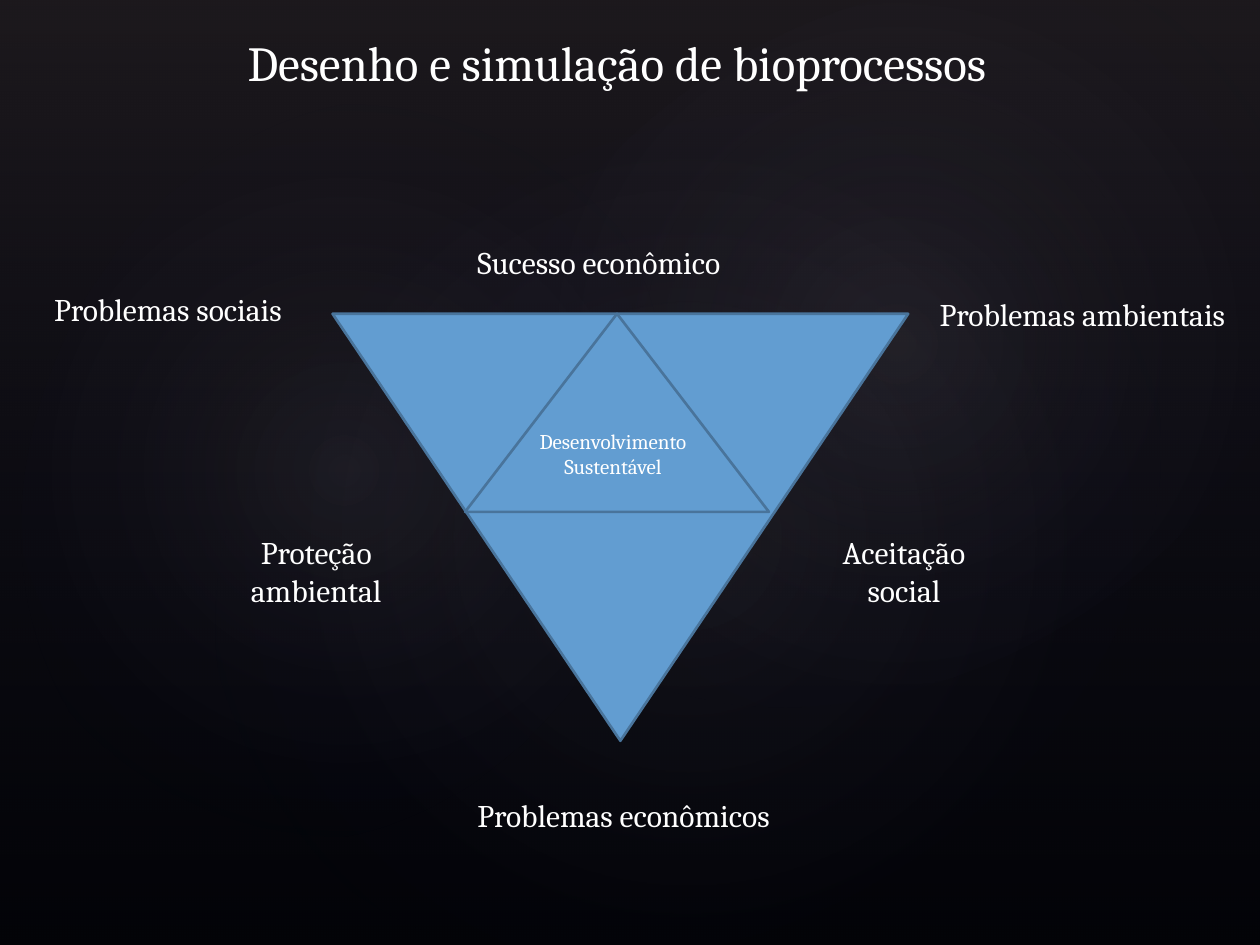
from lxml import etree
from pptx import Presentation
from pptx.dml.color import RGBColor
from pptx.enum.shapes import MSO_SHAPE as Shape
from pptx.enum.text import MSO_AUTO_SIZE as AutoSize, PP_ALIGN as Align
from pptx.oxml.ns import qn
from pptx.util import Pt

W, H = 720, 540
FONT = "Cambria"
COLORS = {"back": "000000", "text": "FFFFFF", "blue": "629DD1", "edge": "49749B",
          "plum": "504652", "navy": "242852", "mist": "C4BCC6"}

# Boxes are (left, top, width, height); stops are (position %, colour, opacity %)
VEIL = [(0, "plum", 36), (100, "navy", 10)]
GLOWS = [
    ((108, 82.1, 570.2, 449.3), 328.7, 7),
    ((-21.6, 92.2, 436.3, 352.8), 294.3, 8),
    ((257.8, 9.4, 510.5, 374.4), 328.7, 8),
]
TRIANGLES = [
    ((190, 179.3, 329, 244), 180),
    ((265.8, 179.3, 173.6, 113.2), 0),
]
LABELS = [
    (["Desenvolvimento", "Sustentável"], (294.5, 241.2, 111.6, 36), 12, Align.CENTER),
    (["Sucesso econômico"], (265.7, 135.4, 168.5, 28.8), 18, Align.LEFT),
    (["Aceitação", "social"], (468, 301, 97.2, 51), 18, Align.CENTER),
    (["Proteção", "ambiental"], (133.2, 301, 95, 51), 18, Align.CENTER),
    (["Problemas sociais"], (23.8, 162, 157, 28.8), 18, Align.LEFT),
    (["Problemas econômicos"], (265.7, 451.4, 198.7, 28.8), 18, Align.LEFT),
    (["Problemas ambientais"], (529.9, 164.9, 192.2, 28.8), 18, Align.LEFT),
    (["Desenho e simulação de bioprocessos"], (110.9, 15.1, 483.1, 41), 28, Align.CENTER),
]


def rgb(name):
    return RGBColor.from_string(COLORS[name])


def add_shape(s, kind, box, rotation=0):
    sp = s.shapes.add_shape(kind, *map(Pt, box))
    sp.rotation = rotation
    sp.shadow.inherit = False
    sp.line.fill.background()
    return sp


def fill_gradient(sp, stops, radial=False):
    """Fill with translucent stops, top to bottom or from the centre outwards."""
    sp.fill.background()
    no_fill = sp._element.spPr.find(qn("a:noFill"))
    grad = etree.Element(qn("a:gradFill"), rotWithShape="1")
    gs_list = etree.SubElement(grad, qn("a:gsLst"))
    for pos, color, opacity in stops:
        gs = etree.SubElement(gs_list, qn("a:gs"), pos=str(pos * 1000))
        clr = etree.SubElement(gs, qn("a:srgbClr"), val=COLORS[color])
        etree.SubElement(clr, qn("a:alpha"), val=str(opacity * 1000))
    if radial:
        path = etree.SubElement(grad, qn("a:path"), path="circle")
        etree.SubElement(path, qn("a:fillToRect"), {side: "50000" for side in "ltrb"})
    else:
        etree.SubElement(grad, qn("a:lin"), ang="5400000", scaled="0")
    no_fill.getparent().replace(no_fill, grad)


def add_text(s, lines, box, *, size, align, color="text"):
    tf = s.shapes.add_textbox(*map(Pt, box)).text_frame
    tf.word_wrap = False
    tf.auto_size = AutoSize.SHAPE_TO_FIT_TEXT
    for i, line in enumerate(lines):
        p = tf.add_paragraph() if i else tf.paragraphs[0]
        p.alignment = align
        r = p.add_run()
        r.text = line
        r.font.name, r.font.size = FONT, Pt(size)
        r.font.color.rgb = rgb(color)


def main():
    prs = Presentation()
    prs.slide_width, prs.slide_height = Pt(W), Pt(H)
    s = prs.slides.add_slide(prs.slide_layouts[6])
    s.background.fill.solid()
    s.background.fill.fore_color.rgb = rgb("back")

    fill_gradient(add_shape(s, Shape.RECTANGLE, (0, 0, W, H)), VEIL)
    for box, rotation, opacity in GLOWS:
        glow = add_shape(s, Shape.OVAL, box, rotation)
        fill_gradient(glow, [(0, "mist", opacity), (58, "navy", 0)], radial=True)

    for box, rotation in TRIANGLES:
        sp = add_shape(s, Shape.ISOSCELES_TRIANGLE, box, rotation)
        sp.fill.solid()
        sp.fill.fore_color.rgb = rgb("blue")
        sp.line.color.rgb = rgb("edge")
        sp.line.width = Pt(1.5)

    for lines, box, size, align in LABELS:
        add_text(s, lines, box, size=size, align=align)

    prs.save("out.pptx")


if __name__ == "__main__":
    main()
